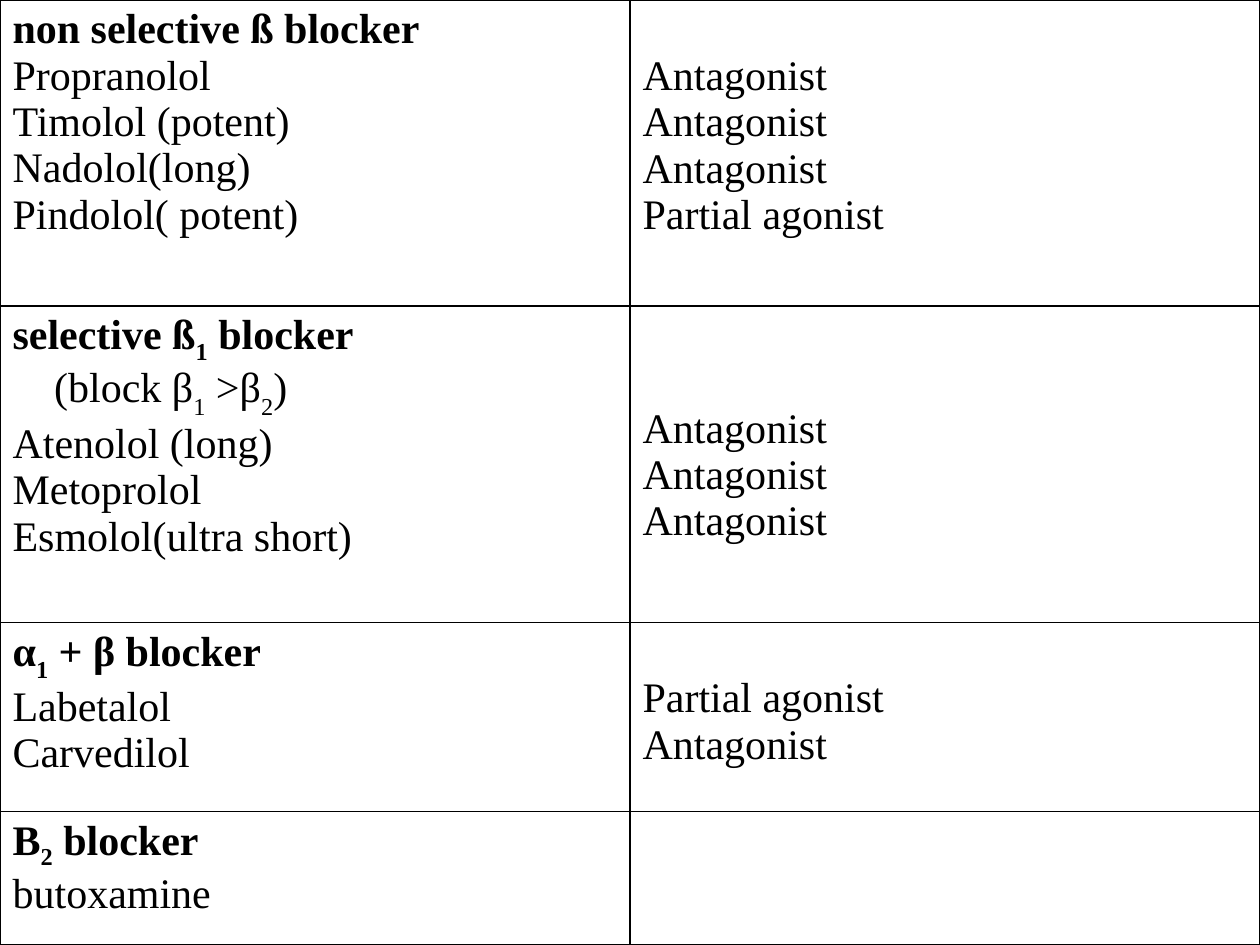
import pptx
import pptx.dml.color
import pptx.enum.text
import pptx.util
from lxml import etree
from pptx.oxml.ns import qn

Inches = pptx.util.Inches
Pt = pptx.util.Pt
ALIGN = pptx.enum.text.PP_ALIGN

FONT, SIZE, BLACK = "Times New Roman", 24, "000000"
LINE_HEIGHT, TOP_MARGIN = 0.37, 0.05
HANGING, NOTE_INDENT = 0.38, 0.33
COLUMN_WIDTHS = [5, 5]

# Text between underscores is a subscript; "drop" is its baseline in the heading.
# "skip" is the number of lines the effects start below the heading.
GROUPS = [
    {"height": 2.43, "heading": "non selective ß blocker", "drop": -25, "note": None,
     "drugs": ["Propranolol", "Timolol (potent)", "Nadolol(long)", "Pindolol( potent)"],
     "effects": ["Antagonist", "Antagonist", "Antagonist", "Partial agonist"], "skip": 1},
    {"height": 2.51, "heading": "selective ß_1_ blocker", "drop": -25,
     "note": "(block β_1_ >β_2_)",
     "drugs": ["Atenolol (long)", "Metoprolol", "Esmolol(ultra short)"],
     "effects": ["Antagonist", "Antagonist", "Antagonist"], "skip": 2},
    {"height": 1.5, "heading": "α_1_ + β blocker", "drop": -30, "note": None,
     "drugs": ["Labetalol", "Carvedilol"],
     "effects": ["Partial agonist", "Antagonist"], "skip": 1},
    {"height": 1.06, "heading": "Β_2_ blocker", "drop": -25, "note": None,
     "drugs": ["butoxamine"], "effects": [], "skip": 0},
]


def color(hex_code):
    return pptx.dml.color.RGBColor.from_string(hex_code)


def add_borders(cell):
    properties = cell._tc.get_or_add_tcPr()
    for position, side in enumerate(("a:lnL", "a:lnR", "a:lnT", "a:lnB")):
        line = etree.Element(qn(side), w=str(Pt(1)))
        fill = etree.SubElement(line, qn("a:solidFill"))
        etree.SubElement(fill, qn("a:srgbClr"), val=BLACK)
        properties.insert(position, line)


def write_line(para, text, bold=False, drop=-30, left=HANGING, indent=-HANGING):
    para.alignment = ALIGN.JUSTIFY
    properties = para._p.get_or_add_pPr()
    properties.set("marL", str(Inches(left)))
    properties.set("indent", str(Inches(indent)))
    for number, piece in enumerate(text.split("_")):
        span = para.add_run()
        span.text = piece
        span.font.name = FONT
        span.font.size = Pt(SIZE)
        span.font.bold = bold
        span.font.color.rgb = color(BLACK)
        if number % 2:
            span._r.get_or_add_rPr().set("baseline", str(drop * 1000))


def fill_cell(cell, lines):
    """Write one paragraph per (text, format options) pair."""
    frame = cell.text_frame
    for number, (text, options) in enumerate(lines):
        para = frame.add_paragraph() if number else frame.paragraphs[0]
        write_line(para, text, **options)


deck = pptx.Presentation()
deck.slide_width, deck.slide_height = Inches(10), Inches(7.5)
page = deck.slides.add_slide(deck.slide_layouts[6])
table = page.shapes.add_table(len(GROUPS), len(COLUMN_WIDTHS), 0, 0,
                              deck.slide_width, deck.slide_height).table
table.first_row = table.horz_banding = False
for column, width in zip(table.columns, COLUMN_WIDTHS):
    column.width = Inches(width)

for row, group in zip(table.rows, GROUPS):
    row.height = Inches(group["height"])
    for cell in row.cells:
        cell.fill.background()
        add_borders(cell)
    drug_cell, effect_cell = row.cells

    lines = [(group["heading"], {"bold": True, "drop": group["drop"]})]
    if group["note"]:
        lines.append((group["note"], {"left": NOTE_INDENT, "indent": 0}))
    lines += [(drug, {}) for drug in group["drugs"]]
    fill_cell(drug_cell, lines)

    effect_cell.margin_top = Inches(TOP_MARGIN + group["skip"] * LINE_HEIGHT)
    fill_cell(effect_cell, [(effect, {}) for effect in group["effects"]])

deck.save("out.pptx")
